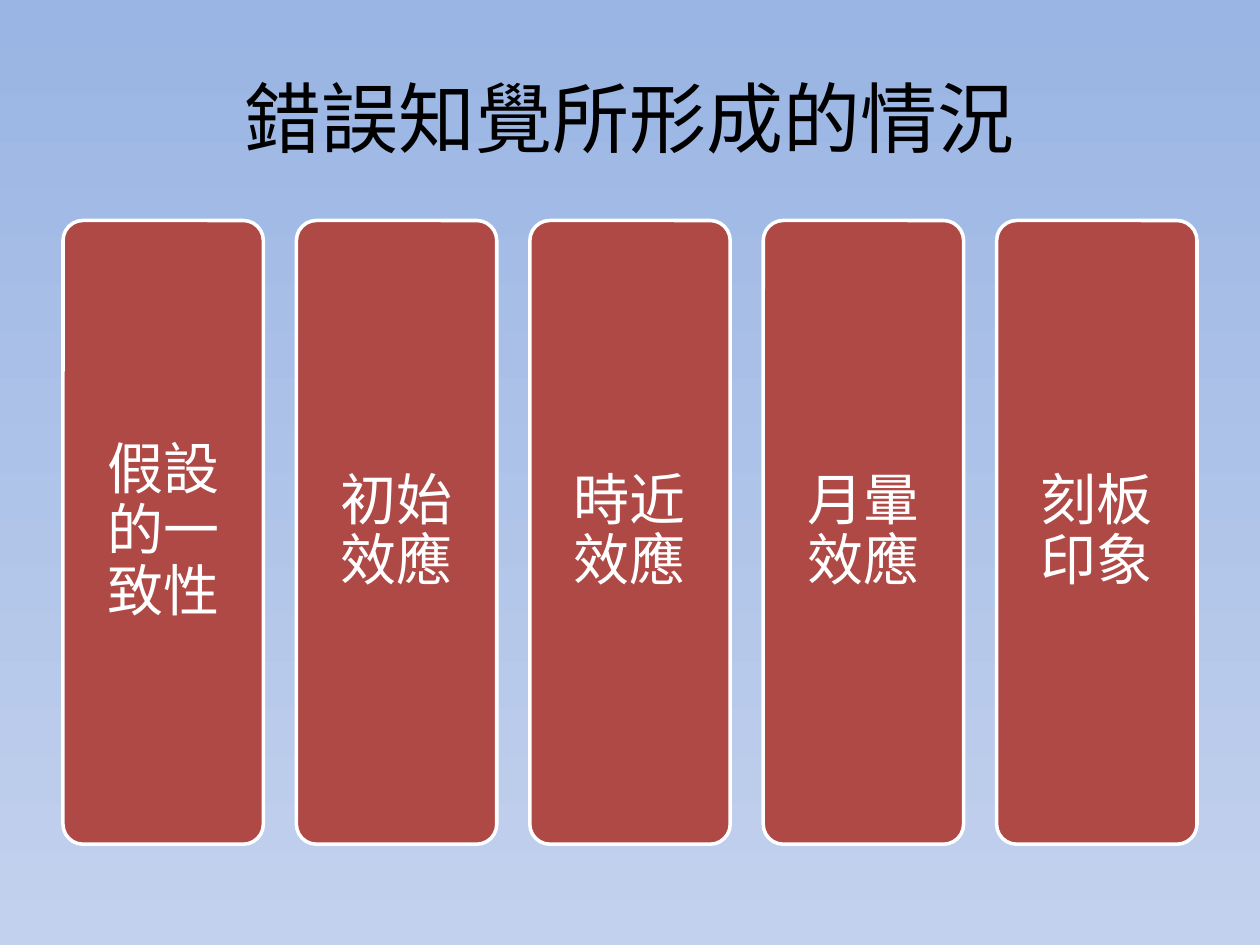
from pptx import Presentation
from pptx.dml.color import RGBColor
from pptx.enum.shapes import MSO_SHAPE as Shape
from pptx.enum.text import MSO_ANCHOR as Anchor, PP_ALIGN as Align
from pptx.oxml.ns import qn
from pptx.util import Inches, Pt
from lxml import etree


def color(value):
    return RGBColor.from_string(value)


class SlideBuilder:
    """Holds the style and the current slide; places are shares of its size."""

    FONT = "Noto Sans CJK SC"
    INK, WHITE, RED = "000000", "FFFFFF", "AE4946"
    SKY = ("9AB5E4", "C2D1ED")
    MARGIN = 0.05

    def __init__(self, deck):
        self.width, self.height = deck.slide_width, deck.slide_height
        self.page = deck.slides.add_slide(deck.slide_layouts[6])

    def place(self, left, top, width, height):
        return (int(left * self.width), int(top * self.height),
                int(width * self.width), int(height * self.height))

    def background(self):
        fill = self.page.background.fill
        fill.gradient()
        fill.gradient_angle = 270  # top to bottom
        for stop, shade, position in zip(fill.gradient_stops, self.SKY, (0, 1)):
            stop.color.rgb = color(shade)
            stop.position = position

    def add_text(self, box, text, size, ink):
        frame = box.text_frame
        frame.word_wrap = True
        frame.vertical_anchor = Anchor.MIDDLE
        para = frame.paragraphs[0]
        para.alignment = Align.CENTER
        span = para.add_run()
        span.text = text
        span.font.size = Pt(size)
        span.font.name = self.FONT
        span.font.color.rgb = color(ink)
        # East Asian typeface
        etree.SubElement(span.font._element, qn("a:ea"), typeface=self.FONT)
        return para

    def title(self, text):
        area = self.place(self.MARGIN, 0.04, 1 - 2 * self.MARGIN, 1 / 6)
        self.add_text(self.page.shapes.add_textbox(*area), text, 44, self.INK)

    def card(self, area, text):
        box = self.page.shapes.add_shape(Shape.ROUNDED_RECTANGLE, *area)
        box.shadow.inherit = False
        box.adjustments[0] = 0.1
        box.fill.solid()
        box.fill.fore_color.rgb = color(self.RED)
        box.line.color.rgb = color(self.WHITE)
        box.line.width = Pt(2)
        frame = box.text_frame
        frame.margin_left = frame.margin_right = Inches(0.13)
        frame.margin_top = frame.margin_bottom = Inches(0.13)
        para = self.add_text(box, text, 32, self.WHITE)
        para.line_spacing = 0.9
        para.space_after = Pt(11)

    def card_row(self, labels, top, height, width):
        # Equal gaps between the left and right margins
        step = (1 - 2 * self.MARGIN - width) / (len(labels) - 1)
        for column, label in enumerate(labels):
            left = self.MARGIN + column * step
            self.card(self.place(left, top, width, height), label)


def main():
    deck = Presentation()
    deck.slide_width, deck.slide_height = Inches(10), Inches(7.5)

    slide = SlideBuilder(deck)
    slide.background()
    slide.title("錯誤知覺所形成的情況")

    # Five causes, side by side
    causes = ["假設的一致性", "初始效應", "時近效應", "月暈效應", "刻板印象"]
    slide.card_row(causes, top=7 / 30, height=0.66, width=0.159)

    deck.save("out.pptx")


if __name__ == "__main__":
    main()
